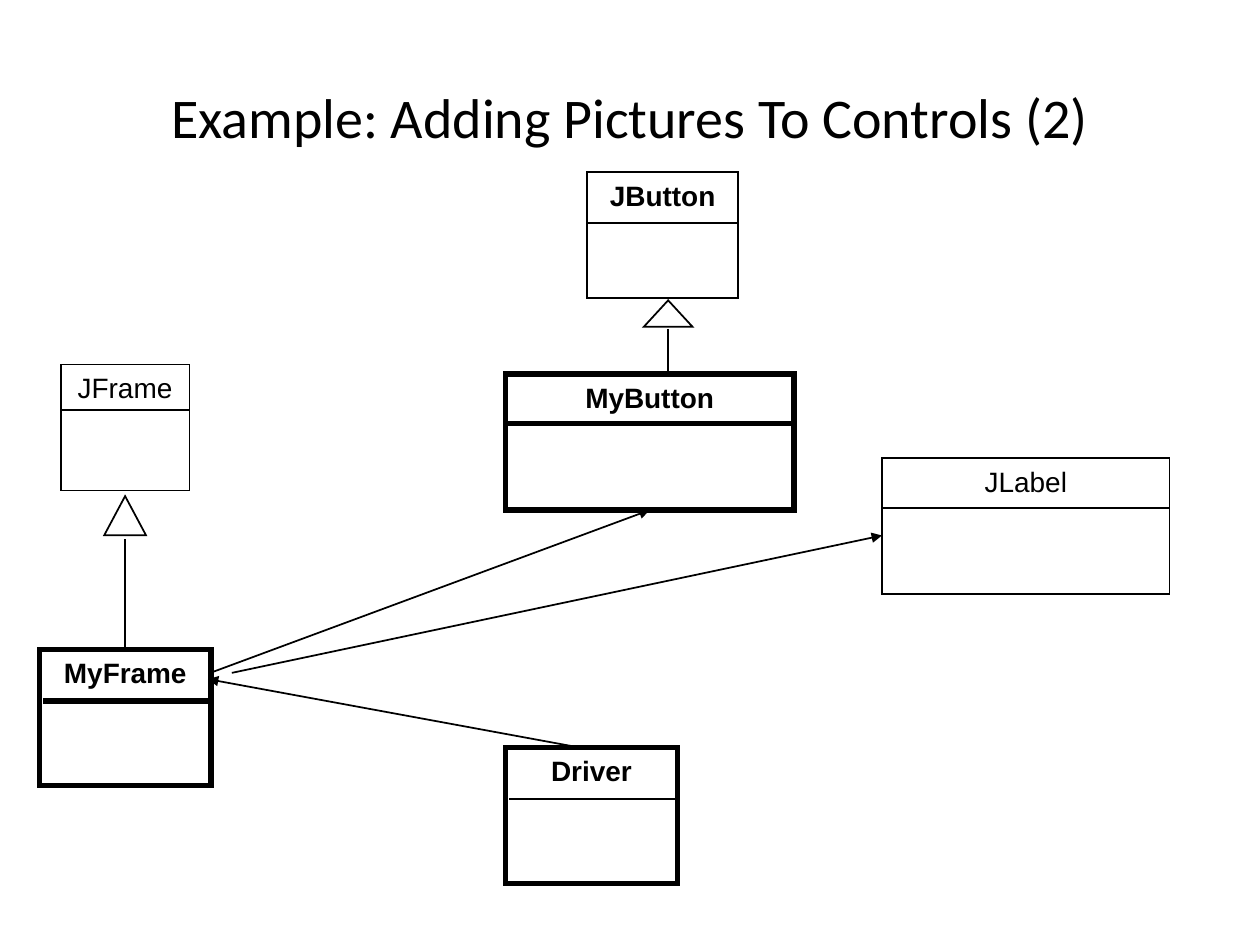
from lxml import etree
from pptx import Presentation
from pptx import util as u
from pptx.dml import color
from pptx.enum import shapes, text
from pptx.oxml import ns

COLORS = {"ink": "000000", "paper": "FFFFFF"}
INSETS = {"margin_left": 7.2, "margin_top": 3.6, "margin_right": 7.2, "margin_bottom": 3.6}
TITLE_BOX = (54, 8.2, 612, 116)
THIN, THICK = 1, 3

CLASSES = [
    ("MyFrame", (22.6, 371, 98, 77.8), 29.6, THICK, THICK, True, None, 2.2),
    ("Driver", (288.7, 427.2, 98.6, 77.8), 29.6, THICK, THIN, True, "paper", 2.2),
    ("JFrame", (34.7, 208.3, 73.6, 72), 26.2, THIN, THIN, False, None, 0),
    ("MyButton", (288.7, 213.7, 165, 77.8), 28.4, THICK, THICK, True, None, 0),
    ("JLabel", (504, 261.8, 164.4, 77.8), 28.4, THIN, THIN, False, None, 0),
    ("JButton", (335.5, 98.3, 86.4, 72), 29.2, THIN, THIN, True, None, 0),
]
ASSOCIATIONS = [
    ((334.1, 427.7), (118.8, 388.1), None),
    ((120.2, 384.5), (372, 293), "MyButton"),
    ((132.5, 384.5), (504, 306), None),
]
INHERITANCES = [
    ((59.6, 283.5, 23.8, 22.3), (71.6, 308.2), (71.6, 371), "MyFrame"),
    ((367.9, 171.6, 27.8, 15.1), (381.8, 187.9), (381.8, 213.7), None),
]


def rgb(name):
    return color.RGBColor.from_string(COLORS[name])


def set_all(target, values):
    for name, value in values.items():
        setattr(target, name, value)


def style_line(line, weight):
    line.color.rgb = rgb("ink")
    line.width = u.Pt(weight)
    return line._get_or_add_ln()


def add_outlined(parent, kind, box, weight, fill):
    shape = parent.add_shape(kind, *map(u.Pt, box))
    shape.shadow.inherit = False
    if fill:
        shape.fill.solid()
        shape.fill.fore_color.rgb = rgb(fill)
    else:
        shape.fill.background()
    etree.SubElement(style_line(shape.line, weight), ns.qn("a:miter"), lim="800000")
    return shape


def add_line(parent, start, end, weight=THIN, arrow=False):
    line = parent.add_connector(shapes.MSO_CONNECTOR.STRAIGHT, *map(u.Pt, start + end))
    stroke = style_line(line.line, weight)
    if arrow:
        etree.SubElement(stroke, ns.qn("a:tailEnd"), type="triangle")
    etree.SubElement(line._element.spPr, ns.qn("a:effectLst"))
    return line


def write(frame, words, font):
    para = frame.paragraphs[0]
    para.alignment = text.PP_ALIGN.CENTER
    span = para.add_run()
    span.text = words
    set_all(span.font, font)
    span.font.color.rgb = rgb("ink")


def add_title(page, box):
    title = page.shapes.title
    set_all(title, dict(zip(("left", "top", "width", "height"), map(u.Pt, box))))
    title.text_frame.vertical_anchor = text.MSO_ANCHOR.MIDDLE
    write(title.text_frame, "Example: Adding Pictures To Controls (2)",
          {"name": "Calibri", "size": u.Pt(32)})


def add_class(page, name, box, header, border, divider, bold, fill, indent):
    left, top, width, height = box
    group = page.shapes.add_group_shape()
    outline = add_outlined(group.shapes, shapes.MSO_SHAPE.RECTANGLE, box, border, fill)
    frame = outline.text_frame
    set_all(frame, {side: u.Pt(size) for side, size in INSETS.items()})
    set_all(frame, {"word_wrap": True, "vertical_anchor": text.MSO_ANCHOR.TOP})
    write(frame, name, {"name": "Arial", "size": u.Pt(16), "bold": bold})
    add_line(group.shapes, (left + indent, top + header),
             (left + width, top + header), divider)
    return outline


def add_association(page, start, end, target):
    arrow = add_line(page.shapes, start, end, arrow=True)
    if target:
        arrow.end_connect(target, 2)


def add_inheritance(page, head, start, end, child):
    stem = add_line(page.shapes, start, end)
    if child:
        stem.end_connect(child, 0)
    add_outlined(page.shapes, shapes.MSO_SHAPE.ISOSCELES_TRIANGLE, head, THIN, "paper")


def main():
    deck = Presentation()
    set_all(deck, {"slide_width": u.Pt(720), "slide_height": u.Pt(540)})
    page = deck.slides.add_slide(deck.slide_layouts[5])
    page.background.fill.solid()
    page.background.fill.fore_color.rgb = rgb("paper")
    add_title(page, TITLE_BOX)
    outlines = {entry[0]: add_class(page, *entry) for entry in CLASSES}
    for start, end, target in ASSOCIATIONS:
        add_association(page, start, end, outlines.get(target))
    for head, start, end, child in INHERITANCES:
        add_inheritance(page, head, start, end, outlines.get(child))
    deck.save("out.pptx")


if __name__ == "__main__":
    main()
